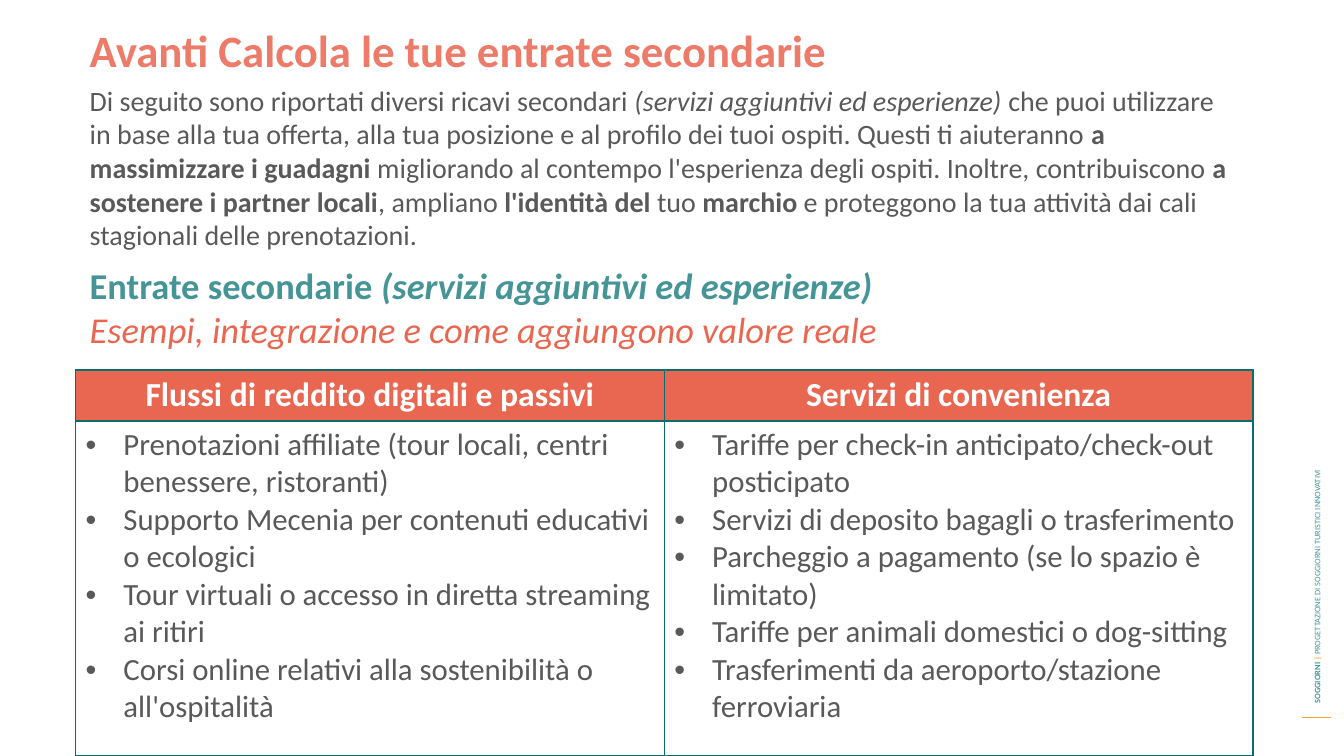
from lxml import etree
from pptx import Presentation
from pptx.dml.color import RGBColor
from pptx.enum.shapes import MSO_CONNECTOR
from pptx.enum.text import MSO_ANCHOR, MSO_AUTO_SIZE as AUTO, PP_ALIGN
from pptx.oxml import parse_xml
from pptx.oxml.ns import nsdecls, qn
from pptx.util import Pt

TEAL = RGBColor(0x45, 0x95, 0x97)
CORAL = RGBColor(0xE9, 0x67, 0x51)
LIGHT_CORAL = RGBColor(0xEC, 0x7C, 0x69)
GREY = RGBColor(0x59, 0x59, 0x59)
AMBER = RGBColor(0xFB, 0xA6, 0x3B)
RULE_AMBER = RGBColor(0xFB, 0xA6, 0x3D)
WHITE = RGBColor(0xFF, 0xFF, 0xFF)
BORDER_HEX = "086D6E"


def add_runs(paragraph, size, color, runs):
    """Each run is a text and a dict of format values."""
    for text, formats in runs:
        run = paragraph.add_run()
        run.text = text
        run.font.color.rgb = formats.get("color", color)
        values = {"name": "Calibri", "size": Pt(size), "bold": False, "italic": False}
        for key, value in (values | formats).items():
            if key != "color":
                setattr(run.font, key, value)


def add_text(left, top, width, height, size, color, lines, auto_size=AUTO.SHAPE_TO_FIT_TEXT):
    box = slide.shapes.add_textbox(Pt(left), Pt(top), Pt(width), Pt(height))
    frame = box.text_frame
    frame.word_wrap = True
    frame.auto_size = auto_size
    for index, runs in enumerate(lines):
        paragraph = frame.add_paragraph() if index else frame.paragraphs[0]
        add_runs(paragraph, size, color, runs)
    return box


prs = Presentation()
prs.slide_width, prs.slide_height = Pt(960), Pt(540)
slide = prs.slides.add_slide(prs.slide_layouts[6])

PLAIN, BOLD, ITALIC = {}, {"bold": True}, {"italic": True}

# Side label with its rule
side_rule = slide.shapes.add_connector(
    MSO_CONNECTOR.STRAIGHT, Pt(930), Pt(512.5), Pt(951), Pt(512.5))
side_rule.line.color.rgb = RULE_AMBER
side_rule.line.width = Pt(0.75)
etree.SubElement(side_rule._element.spPr, qn("a:effectLst"))

side_label = add_text(733, 294.5, 415.5, 14.5, 6, TEAL, [[
    ("SOGGIORNI ", BOLD),
    ("| ", {"bold": True, "color": AMBER}),
    ("PROGETTAZIONE DI SOGGIORNI TURISTICI INNOVATIVI", PLAIN),
]])
side_label.rotation = 270
side_label.text_frame.vertical_anchor = MSO_ANCHOR.MIDDLE

# Income table
income_streams = {
    "Flussi di reddito digitali e passivi": [
        "Prenotazioni affiliate (tour locali, centri benessere, ristoranti)",
        "Supporto Mecenia per contenuti educativi o ecologici",
        "Tour virtuali o accesso in diretta streaming ai ritiri",
        "Corsi online relativi alla sostenibilità o all'ospitalità",
    ],
    "Servizi di convenienza": [
        "Tariffe per check-in anticipato/check-out posticipato",
        "Servizi di deposito bagagli o trasferimento",
        "Parcheggio a pagamento (se lo spazio è limitato)",
        "Tariffe per animali domestici o dog-sitting",
        "Trasferimenti da aeroporto/stazione ferroviaria",
    ],
}
income_table = slide.shapes.add_table(
    2, len(income_streams), Pt(54), Pt(264.25), Pt(841), Pt(275.75)).table
income_table.rows[0].height = Pt(36.5)
income_table.rows[1].height = Pt(239.25)

for column, (heading, services) in enumerate(income_streams.items()):
    header_cell, services_cell = (income_table.cell(row, column) for row in range(2))

    header_line = header_cell.text_frame.paragraphs[0]
    header_line.alignment = PP_ALIGN.CENTER
    add_runs(header_line, 24, WHITE, [(heading, BOLD)])
    header_cell.fill.solid()
    header_cell.fill.fore_color.rgb = CORAL

    services_frame = services_cell.text_frame
    for index, service in enumerate(services):
        item = services_frame.add_paragraph() if index else services_frame.paragraphs[0]
        props = item._p.get_or_add_pPr()
        props.set("marL", str(Pt(27)))
        props.set("indent", str(-Pt(27)))
        etree.SubElement(props, qn("a:buFont")).set("typeface", "Arial")
        etree.SubElement(props, qn("a:buChar")).set("char", "•")
        add_runs(item, 22, GREY, [(service, PLAIN)])
    services_cell.fill.background()

    # Borders come before the fill in the cell properties
    for cell in (header_cell, services_cell):
        cell_props = cell._tc.get_or_add_tcPr()
        for position, side in enumerate(("lnL", "lnR", "lnT", "lnB")):
            cell_props.insert(position, parse_xml(
                f'<a:{side} {nsdecls("a")} w="{Pt(1)}"><a:solidFill>'
                f'<a:srgbClr val="{BORDER_HEX}"/></a:solidFill></a:{side}>'))

# Subtitle
add_text(57, 184.5, 836, 63.5, 26, TEAL, [
    [("Entrate secondarie ", BOLD),
     ("(servizi aggiuntivi ed esperienze)", BOLD | ITALIC)],
    [("Esempi, integrazione e come aggiungono valore reale",
      {"italic": True, "color": CORAL})],
], AUTO.NONE)

# Title
add_text(57, 13, 951, 46, 32, LIGHT_CORAL,
         [[("Avanti Calcola le tue entrate secondarie", BOLD)]])

# Introduction
introduction = add_text(57, 56, 826.5, 128, 20, GREY, [[
    ("Di seguito sono riportati diversi ricavi secondari ", PLAIN),
    ("(servizi aggiuntivi ed esperienze) ", ITALIC),
    ("che puoi utilizzare in base alla tua offerta, alla tua posizione e al profilo "
     "dei tuoi ospiti. Questi ti aiuteranno ", PLAIN),
    ("a massimizzare i guadagni ", BOLD),
    ("migliorando al contempo l'esperienza degli ospiti. Inoltre, contribuiscono ", PLAIN),
    ("a sostenere i partner locali", BOLD),
    (", ampliano ", PLAIN),
    ("l'identità del", BOLD),
    (" tuo ", PLAIN),
    ("marchio ", BOLD),
    ("e proteggono la tua attività dai cali stagionali delle prenotazioni.", PLAIN),
]])
introduction.text_frame.paragraphs[0].space_after = Pt(6)

prs.save("out.pptx")
